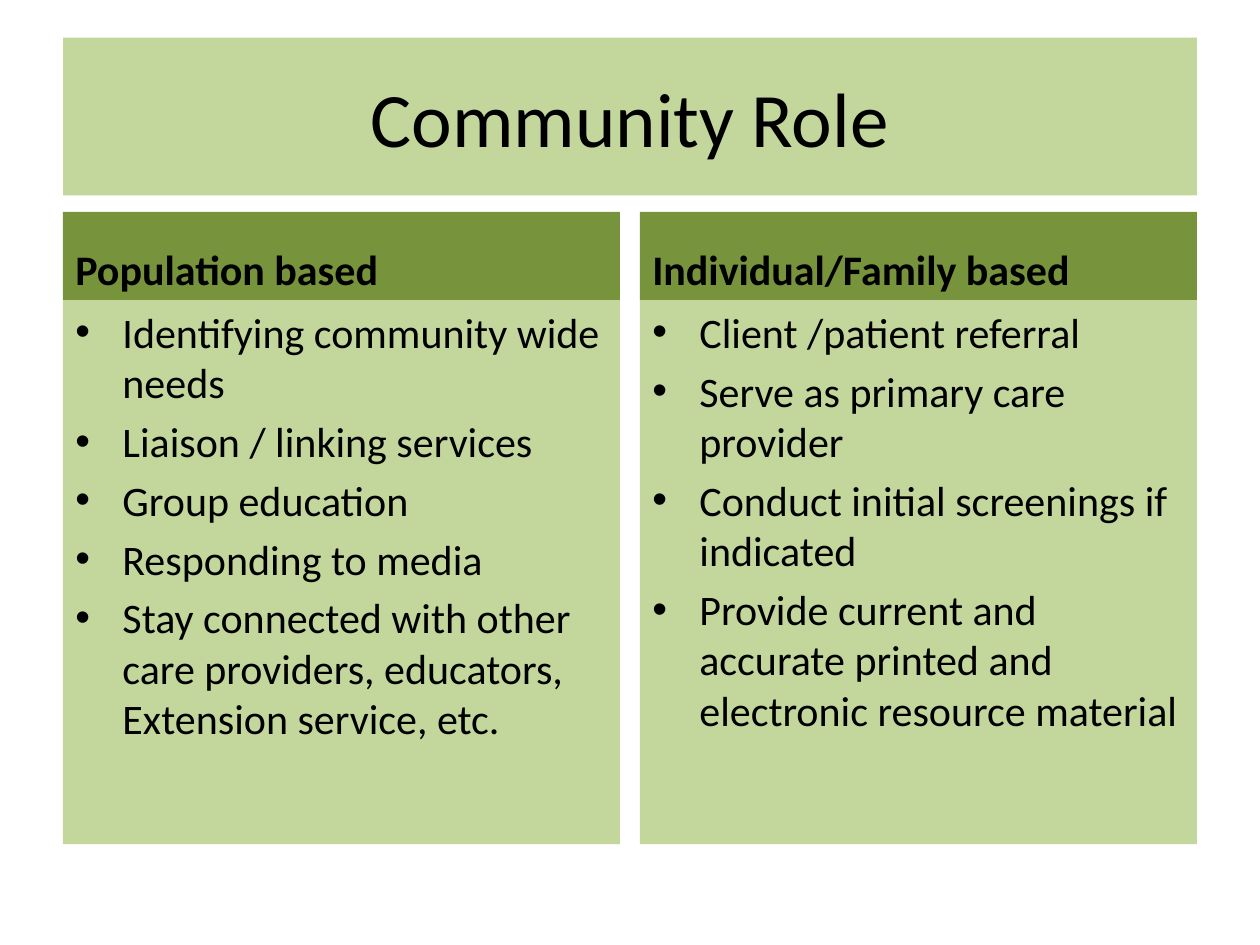
from lxml import etree
from pptx import Presentation
from pptx.dml.color import RGBColor
from pptx.enum import text
from pptx.oxml import ns
from pptx.util import Cm, Pt

# Content
TITLE = "Community Role"
COLUMNS = [
    ("Population based", [
        "Identifying community wide needs",
        "Liaison / linking services",
        "Group education",
        "Responding to media",
        "Stay connected with other care providers, educators, Extension service, etc.",
    ]),
    ("Individual/Family based", [
        "Client /patient referral",
        "Serve as primary care provider",
        "Conduct initial screenings if indicated",
        "Provide current and accurate printed and electronic resource material",
    ]),
]

# Style
LIGHT_GREEN = RGBColor(0xC3, 0xD6, 0x9B)
DARK_GREEN = RGBColor(0x77, 0x93, 0x3C)
BLACK = RGBColor(0, 0, 0)
FONT = "Calibri"

# Layout
SLIDE_W, SLIDE_H = Cm(25.4), Cm(19.05)
MARGIN = Cm(1.27)
TITLE_TOP, TITLE_H = Cm(0.76), Cm(3.18)
HEAD_TOP, HEAD_H = Cm(4.27), Cm(1.78)
LIST_H = Cm(10.97)
COL_W = Cm(11.23)
INDENT = Cm(0.95)
CONTENT_W = SLIDE_W - 2 * MARGIN
COL_STEP = (CONTENT_W - COL_W) // (len(COLUMNS) - 1)


def fill(sp, color):
    sp.fill.solid()
    sp.fill.fore_color.rgb = color


def add_run(p, words, size, bold=False):
    r = p.add_run()
    r.text = words
    r.font.name, r.font.size, r.font.bold = FONT, Pt(size), bold
    r.font.color.rgb = BLACK


def add_bullet(p):
    pPr = p._p.get_or_add_pPr()
    pPr.set("marL", str(INDENT))
    pPr.set("indent", str(-INDENT))
    etree.SubElement(pPr, ns.qn("a:buFont")).set("typeface", "Arial")
    etree.SubElement(pPr, ns.qn("a:buChar")).set("char", "•")


def add_panel(s, box, color, lines, anchor, bold=False, bullets=False):
    sp = s.shapes.add_textbox(*box)
    fill(sp, color)
    tf = sp.text_frame
    tf.word_wrap = True
    tf.vertical_anchor = anchor
    for i, line in enumerate(lines):
        p = tf.add_paragraph() if i else tf.paragraphs[0]
        if bullets:
            add_bullet(p)
        if i:
            p.space_before = Pt(4.8)
        add_run(p, line, 24, bold)


prs = Presentation()
prs.slide_width, prs.slide_height = SLIDE_W, SLIDE_H
s = prs.slides.add_slide(prs.slide_layouts[5])

# Title band
title = s.shapes.title
title.left, title.top, title.width, title.height = MARGIN, TITLE_TOP, CONTENT_W, TITLE_H
fill(title, LIGHT_GREEN)
title.text_frame.vertical_anchor = text.MSO_ANCHOR.MIDDLE
p = title.text_frame.paragraphs[0]
p.alignment = text.PP_ALIGN.CENTER
add_run(p, TITLE, 44)

# Columns: heading above bulleted list
for i, (heading, items) in enumerate(COLUMNS):
    left = MARGIN + i * COL_STEP
    add_panel(s, (left, HEAD_TOP, COL_W, HEAD_H), DARK_GREEN, [heading],
              text.MSO_ANCHOR.BOTTOM, bold=True)
    add_panel(s, (left, HEAD_TOP + HEAD_H, COL_W, LIST_H), LIGHT_GREEN, items,
              text.MSO_ANCHOR.TOP, bullets=True)

prs.save("out.pptx")
